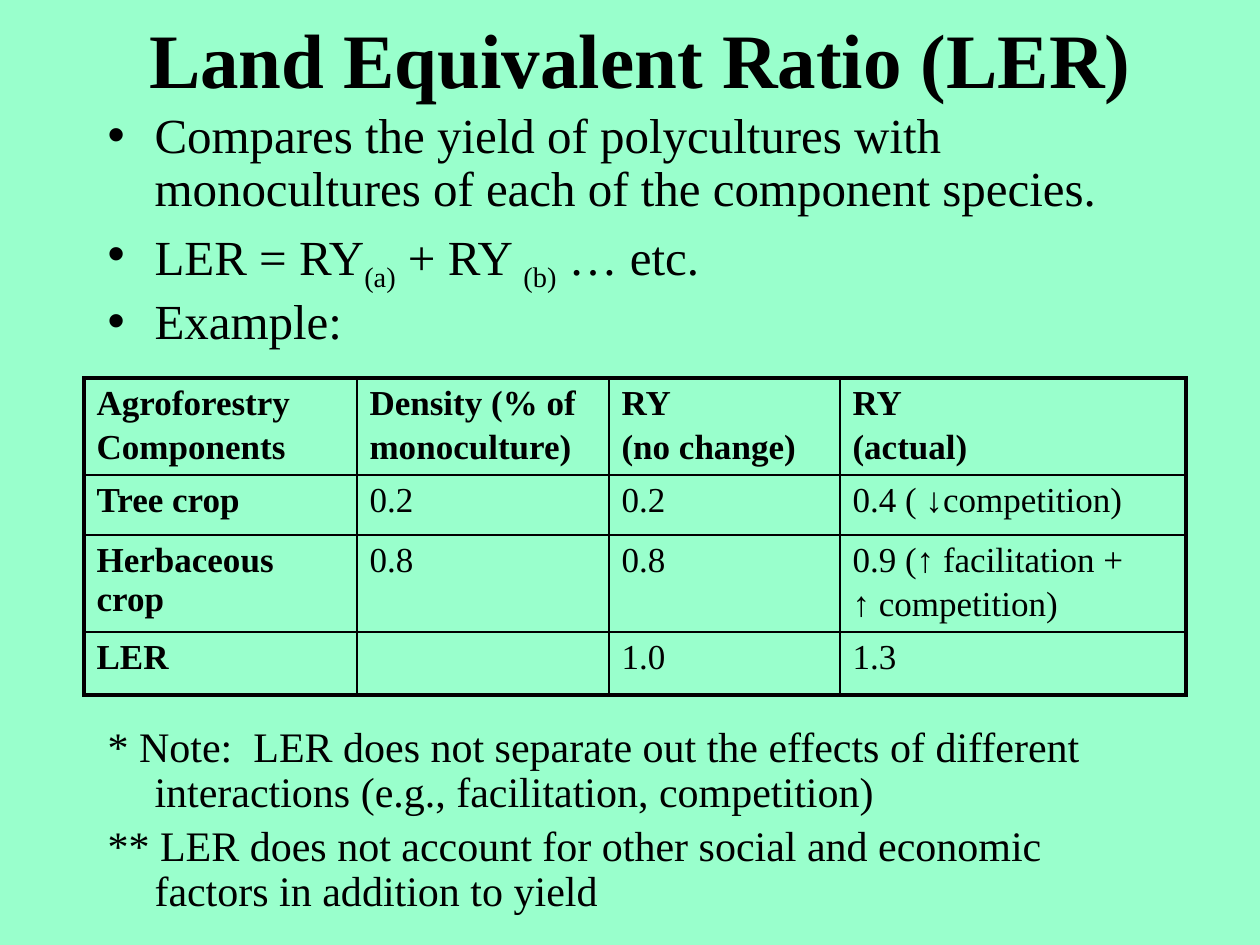
from lxml import etree
from pptx import Presentation
from pptx.dml.color import RGBColor
from pptx.enum.text import MSO_ANCHOR, MSO_AUTO_SIZE, PP_ALIGN
from pptx.oxml.ns import qn
from pptx.util import Emu, Pt

CENTER = PP_ALIGN.CENTER
MIDDLE, TOP = MSO_ANCHOR.MIDDLE, MSO_ANCHOR.TOP
NO_AUTOFIT = MSO_AUTO_SIZE.NONE
TITLE_LAYOUT = 1
PX_PER_INCH = 126


def px(length):
    return Emu(round(length * 914400 / PX_PER_INCH))


def color(value):
    return RGBColor.from_string(value)


class SlideBuilder:
    font, ink, background = "Times New Roman", "000000", "99FFCC"
    thin, thick = 1, 2.25
    indent = 47

    def __init__(self, deck):
        self.page = deck.slides.add_slide(deck.slide_layouts[TITLE_LAYOUT])
        fill = self.page.background.fill
        fill.solid()
        fill.fore_color.rgb = color(self.background)

    def place(self, box, left, top, width, height, anchor):
        box.left, box.top = px(left), px(top)
        box.width, box.height = px(width), px(height)
        frame = box.text_frame
        frame.word_wrap, frame.auto_size = True, NO_AUTOFIT
        frame.vertical_anchor = anchor
        return frame

    def style(self, para, size, bold=False, before=0):
        para.font.name, para.font.size, para.font.bold = self.font, Pt(size), bold
        para.font.color.rgb = color(self.ink)
        para.space_before = Pt(before)

    def title(self, text, *bounds):
        para = self.place(self.page.shapes.title, *bounds, MIDDLE).paragraphs[0]
        para.text, para.alignment = text, CENTER
        self.style(para, 44, bold=True)

    def body(self, items, *bounds):
        """Each item: spans of (text, baseline), size, bulleted, space before."""
        frame = self.place(self.page.placeholders[1], *bounds, TOP)
        for number, (spans, size, bulleted, before) in enumerate(items):
            para = frame.add_paragraph() if number else frame.paragraphs[0]
            for text, baseline in spans:
                span = para.add_run()
                span.text = text
                if baseline:
                    span.font._element.set("baseline", str(baseline * 1000))
            para.line_spacing = 0.9
            self.style(para, size, before=before)
            self.bullet(para, bulleted)

    def bullet(self, para, bulleted):
        # Hanging indent; the bullet must precede the default run properties
        properties = para._p.get_or_add_pPr()
        properties.set("marL", str(px(self.indent)))
        properties.set("indent", str(-px(self.indent)))
        mark = etree.Element(qn("a:buChar" if bulleted else "a:buNone"))
        if bulleted:
            mark.set("char", "•")
        properties.find(qn("a:defRPr")).addprevious(mark)

    def table(self, rows, widths, heights, left, top):
        grid = self.page.shapes.add_table(
            len(rows), len(widths), px(left), px(top),
            px(sum(widths)), px(sum(heights))).table
        grid.first_row = grid.horz_banding = False
        for column, width in zip(grid.columns, widths):
            column.width = px(width)
        for row, height in zip(grid.rows, heights):
            row.height = px(height)
        last_row, last_column = len(rows) - 1, len(widths) - 1
        for r, texts in enumerate(rows):
            for c, text in enumerate(texts):
                cell = grid.cell(r, c)
                cell.text = text
                for number, para in enumerate(cell.text_frame.paragraphs):
                    self.style(para, 20, bold=r == 0 or c == 0,
                               before=3 if number else 0)
                self.borders(cell, {"lnL": c == 0, "lnR": c == last_column,
                                    "lnT": r == 0, "lnB": r == last_row})
                cell.fill.background()

    def borders(self, cell, outer_sides):
        properties = cell._tc.get_or_add_tcPr()
        for side, outer in outer_sides.items():
            width = Pt(self.thick if outer else self.thin)
            line = etree.SubElement(properties, qn(f"a:{side}"), w=str(width))
            fill = etree.SubElement(line, qn("a:solidFill"))
            etree.SubElement(fill, qn("a:srgbClr"), val=self.ink)


def main():
    deck = Presentation()
    deck.slide_width, deck.slide_height = px(1260), px(945)
    slide = SlideBuilder(deck)

    # Heading
    slide.title("Land Equivalent Ratio (LER)", 105, -21, 1071, 157)

    # Points above the table, notes below it
    formula = [("LER = RY", 0), ("(a)", -25), (" + RY ", 0), ("(b)", -25),
               (" … etc.", 0)]
    slide.body([
        ([("Compares the yield of polycultures with monocultures of each of "
           "the component species.", 0)], 28, True, 0),
        (formula, 28, True, 5.6),
        ([("Example:", 0)], 28, True, 5.6),
        ([("* Note:  LER does not separate out the effects of different "
           "interactions (e.g., facilitation, competition)", 0)], 24, False, 215),
        ([("** LER does not account for other social and economic factors "
           "in addition to yield", 0)], 24, False, 4.8),
    ], 95, 105, 1071, 567)

    # Worked example
    slide.table([
        ["Agroforestry\nComponents", "Density (% of\nmonoculture)",
         "RY\n(no change)", "RY\n(actual)"],
        ["Tree crop", "0.2", "0.2", "0.4 ( ↓competition)"],
        ["Herbaceous crop", "0.8", "0.8",
         "0.9 (↑ facilitation +\n↑ competition)"],
        ["LER", "", "1.0", "1.3"],
    ], widths=[273, 252, 231, 346], heights=[97, 60, 97, 63], left=84, top=378)

    deck.save("out.pptx")


if __name__ == "__main__":
    main()
